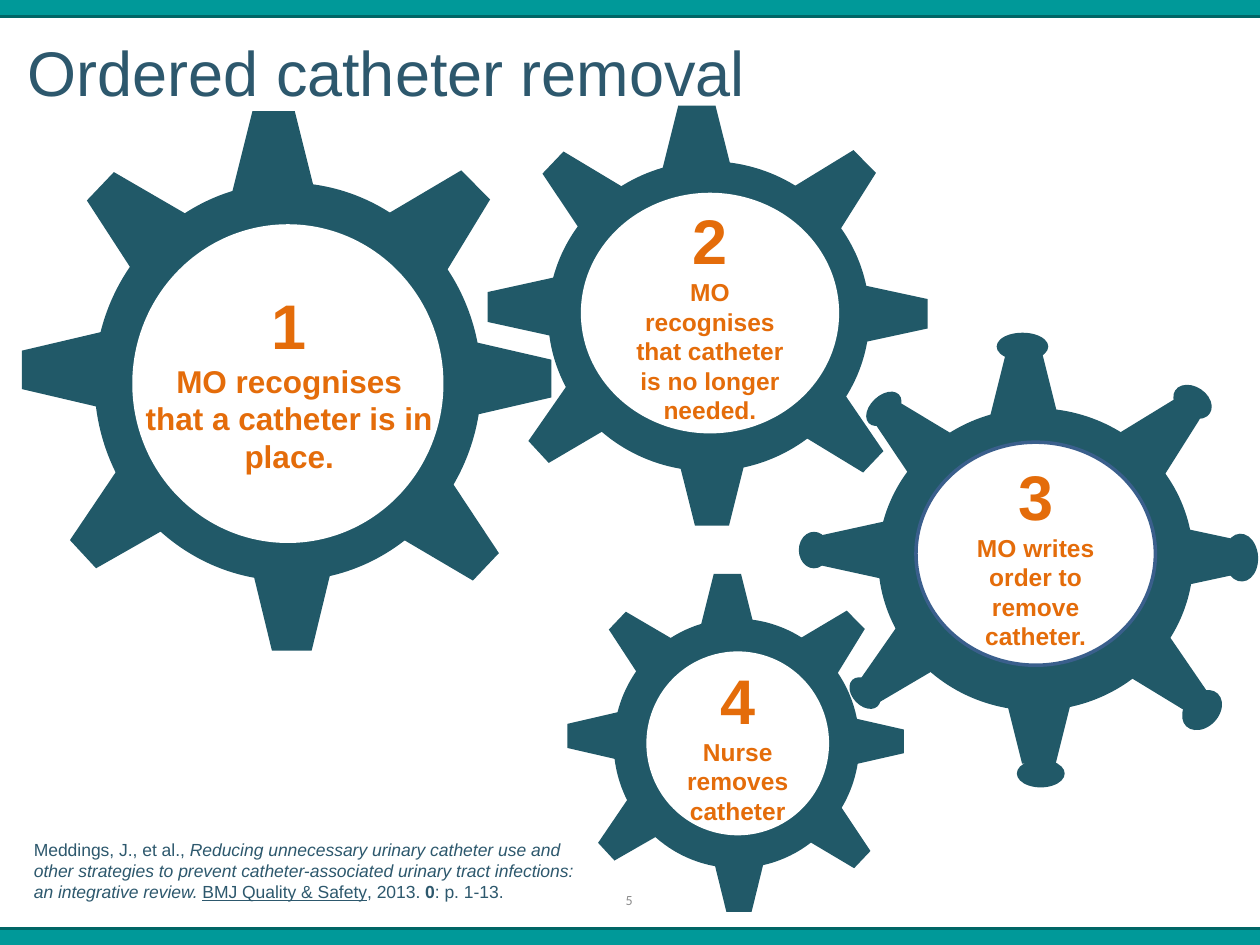
from pptx import Presentation
from pptx.dml.color import RGBColor
from pptx.enum.shapes import MSO_CONNECTOR, MSO_SHAPE
from pptx.enum.text import MSO_ANCHOR, PP_ALIGN
from pptx.oxml.ns import qn
from pptx.util import Inches, Pt
from lxml.etree import SubElement

TEAL, EDGE, GEAR = "009999", "006666", "215968"
INK, WARM, WHITE = "2D586D", "E46C0A", "FFFFFF"

# Teeth: centre x, y, width, height in percent of the hub, then turn.
# A sideways tooth takes its width from the hub height, and vice versa.
TEETH = [
    (46.3, -7.7, 21.5, 20.5, 0),
    (51, 107.3, 20.5, 20.5, 180),
    (107.5, 49.2, 19, 21.2, 90),
    (-8.2, 47, 19.3, 21.2, 270),
    (91, 7.8, 20.6, 21.2, 45.4),
    (93.5, 89.4, 19, 21.2, 133.5),
    (4.8, 86.3, 19.3, 21.2, 227.2),
    (9.2, 8, 19.7, 21.2, 313.6),
]

# Knobs: centre x, y in percent of the hub, width, height in inches, turn.
KNOBS = [
    (45.8, -20.4, 0.41, 0.22, 0),
    (102.8, 99.8, 0.36, 0.27, 134.2),
    (115.2, 49.4, 0.38, 0.27, 86.8),
    (99.8, -2.1, 0.33, 0.24, 33.8),
    (1.8, 0.2, 0.33, 0.21, 316.8),
    (-20.4, 46.9, 0.24, 0.29, 0),
    (-4.2, 94.2, 0.29, 0.20, 46.2),
    (51.6, 120.8, 0.38, 0.22, 0),
]


def color(code):
    return RGBColor.from_string(code)


def shape(home, kind, box, fill, line=None, turn=0):
    part = home.add_shape(kind, *map(Inches, box))
    part.shadow.inherit = False
    part.fill.solid()
    part.fill.fore_color.rgb = color(fill)
    if line:
        part.line.color.rgb = color(line)
        part.line.width = Pt(2)
    else:
        part.line.fill.background()
    part.rotation = turn
    return part


def write(part, paras, size=18, font="Arial", ink=INK, bold=False,
          align=PP_ALIGN.LEFT, anchor=MSO_ANCHOR.TOP):
    """Each paragraph is a list of (text, changes to the font) pairs."""
    frame = part.text_frame
    frame.word_wrap = True
    frame.vertical_anchor = anchor
    for i, runs in enumerate(paras):
        para = frame.add_paragraph() if i else frame.paragraphs[0]
        para.alignment = align
        for text, looks in runs:
            run = para.add_run()
            run.text = text
            run.font.name = font
            run.font.size = Pt(size)
            run.font.bold = bold
            run.font.color.rgb = color(ink)
            for name, value in looks.items():
                setattr(run.font, name, value)


def label(home, box, paras, **looks):
    write(home.add_textbox(*map(Inches, box)), paras, **looks)


def step(part, number, text, size=14):
    write(part, [[(number, {"size": Pt(36)})], [(text, {})]], size=size,
          ink=WARM, bold=True, align=PP_ALIGN.CENTER,
          anchor=MSO_ANCHOR.MIDDLE)


def gear(home, hub, disc, knobs=(), line=None):
    """Place hub, teeth, knobs and the white disc; return the disc."""
    left, top, wide, high = hub
    group = home.add_group_shape().shapes

    def spot(x, y, w, h):
        return (left + wide * x / 100 - w / 2,
                top + high * y / 100 - h / 2, w, h)

    shape(group, MSO_SHAPE.OVAL, hub, GEAR)
    for x, y, w, h, turn in TEETH:
        across, along = (wide, high) if turn % 180 == 0 else (high, wide)
        box = spot(x, y, across * w / 100, along * h / 100)
        shape(group, MSO_SHAPE.TRAPEZOID, box, GEAR, turn=turn)
    for x, y, w, h, turn in knobs:
        shape(group, MSO_SHAPE.OVAL, spot(x, y, w, h), GEAR, turn=turn)
    return shape(home, MSO_SHAPE.OVAL, disc, WHITE, line)


def band(home, box, edge):
    """Place a teal band with a dark rule at height edge."""
    left, _, wide, _ = box
    shape(home, MSO_SHAPE.RECTANGLE, box, TEAL)
    rule = home.add_connector(MSO_CONNECTOR.STRAIGHT, Inches(left),
                              Inches(edge), Inches(left + wide), Inches(edge))
    rule.line.color.rgb = color(EDGE)
    rule.line.width = Pt(2)
    SubElement(rule._element.spPr, qn("a:effectLst"))


def main():
    deck = Presentation()
    deck.slide_width, deck.slide_height = Inches(10), Inches(7.5)
    home = deck.slides.add_slide(deck.slide_layouts[6]).shapes

    # Bands
    band(home, (0, 0, 10, 0.13), 0.13)
    band(home, (0, 7.37, 10, 0.13), 7.37)

    # Gears, from back to front
    third = gear(home, (6.97, 3.24, 2.5, 2.4), (7.27, 3.51, 1.9, 1.77),
                 KNOBS, "3A5F8C")
    step(third, "3", "MO writes order to remove catheter.")
    gear(home, (0.75, 1.45, 3.07, 3.16), (1.05, 1.78, 2.47, 2.53))
    first = home.add_textbox(*map(Inches, (1.04, 2.21, 2.51, 1.62)))
    step(first, "1", "MO recognises that a catheter is in place.", size=18)
    second = gear(home, (4.35, 1.28, 2.55, 2.46), (4.61, 1.53, 2.05, 1.91))
    step(second, "2", "MO recognises that catheter is no longer needed.")
    fourth = gear(home, (4.87, 4.91, 1.95, 1.98), (5.13, 5.17, 1.45, 1.46))
    step(fourth, "4", "Nurse removes catheter")

    # Title, source and page number
    label(home, (0.12, 0.13, 9.42, 0.87),
          [[("Ordered catheter removal", {})]],
          size=36, anchor=MSO_ANCHOR.MIDDLE)
    label(home, (0.17, 6.61, 4.49, 0.61), [[
        ("Meddings, J., et al., ", {}),
        ("Reducing unnecessary urinary catheter use and other strategies to "
         "prevent catheter-associated urinary tract infections: an "
         "integrative review. ", {"italic": True}),
        ("BMJ Quality & Safety", {"underline": True}),
        (", 2013. ", {}),
        ("0", {"bold": True}),
        (": p. 1-13.", {}),
    ]], size=10)
    label(home, (3.83, 6.94, 2.33, 0.4), [[("5", {})]], size=8,
          font="Calibri", ink="8C8C8C", align=PP_ALIGN.CENTER,
          anchor=MSO_ANCHOR.MIDDLE)

    deck.save("out.pptx")


if __name__ == "__main__":
    main()
